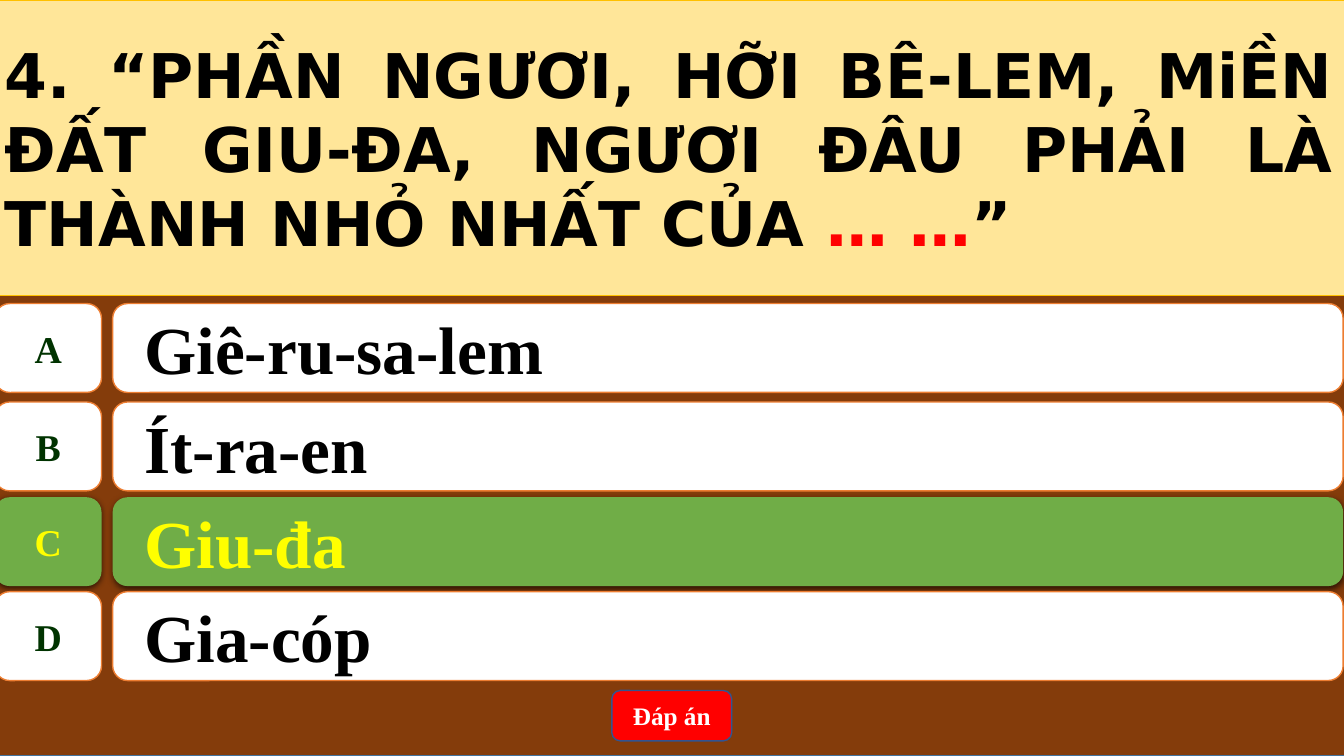
from lxml import etree
from pptx import Presentation
from pptx.dml.color import RGBColor
from pptx.enum.shapes import MSO_SHAPE
from pptx.enum.text import MSO_ANCHOR, MSO_AUTO_SIZE, PP_ALIGN
from pptx.oxml import parse_xml
from pptx.util import Cm, Pt

RECT, ROUNDED = MSO_SHAPE.RECTANGLE, MSO_SHAPE.ROUNDED_RECTANGLE
LETTER_BOX = MSO_SHAPE.FLOWCHART_ALTERNATE_PROCESS
MIDDLE, NO_FIT = MSO_ANCHOR.MIDDLE, MSO_AUTO_SIZE.NONE
LEFT, CENTER, JUSTIFY = PP_ALIGN.LEFT, PP_ALIGN.CENTER, PP_ALIGN.JUSTIFY
TITLE_ONLY = 5

COLORS = {
    "brown": "843C0B", "blue": "43739E", "cream": "FFE699", "gold": "FFC000",
    "white": "FFFFFF", "orange": "ED7D31", "green": "70AD47", "yellow": "FFFF00",
    "dark green": "003300", "black": "000000", "red": "FF0000", "navy": "325491",
}
SHADOW = (
    '<a:effectLst xmlns:a="http://schemas.openxmlformats.org/drawingml/2006/main">'
    '<a:outerShdw blurRad="57150" dist="19050" dir="5400000" algn="ctr" rotWithShape="0">'
    '<a:srgbClr val="000000"><a:alpha val="63000"/></a:srgbClr>'
    '</a:outerShdw></a:effectLst>'
)


class QuizSlide:
    FONT = "Times New Roman"
    QUESTION_FONT = "DejaVu Sans"
    EDGE, WIDTH = -0.13, 34.01
    LETTER_WIDTH, ANSWER_LEFT, ANSWER_WIDTH = 2.69, 2.84, 31.01
    ROW_HEIGHT = 2.24

    def __init__(self, presentation):
        self.slide = presentation.slides.add_slide(presentation.slide_layouts[TITLE_ONLY])

    def color(self, name):
        return RGBColor.from_string(COLORS[name])

    def paint(self, shape, fill, line=None, line_width=1):
        shape.fill.solid()
        shape.fill.fore_color.rgb = self.color(fill)
        if line:
            shape.line.color.rgb = self.color(line)
            shape.line.width = Pt(line_width)
        else:
            shape.line.fill.background()

    def box(self, kind, left, top, width, height, fill, line=None):
        shape = self.slide.shapes.add_shape(kind, Cm(left), Cm(top), Cm(width), Cm(height))
        shape.shadow.inherit = False
        self.paint(shape, fill, line)
        return shape

    def label(self, shape, text, size, color, align=CENTER, wrap=True):
        frame = shape.text_frame
        frame.word_wrap = wrap
        frame.vertical_anchor = MIDDLE
        paragraph = frame.paragraphs[0]
        paragraph.text = text
        paragraph.alignment = align
        font = paragraph.font
        font.name, font.size, font.bold = self.FONT, Pt(size), True
        font.color.rgb = self.color(color)

    def cast_shadow(self, shape):
        properties = shape.element.spPr
        for effects in properties.findall("{*}effectLst"):
            properties.replace(effects, parse_xml(etree.tostring(etree.fromstring(SHADOW))))

    def question(self, parts):
        title = self.slide.shapes.title
        title.left, title.top = Cm(self.EDGE), Cm(0)
        title.width, title.height = Cm(self.WIDTH), Cm(7.44)
        self.paint(title, "cream", "gold", 0.5)
        frame = title.text_frame
        frame.word_wrap, frame.auto_size = True, NO_FIT
        frame.vertical_anchor = MIDDLE
        paragraph = frame.paragraphs[0]
        paragraph.alignment = JUSTIFY
        font = paragraph.font
        font.name, font.size, font.bold = self.QUESTION_FONT, Pt(44), True
        for text, color in parts:
            run = paragraph.add_run()
            run.text = text
            run.font.color.rgb = self.color(color)
        # Bring the question in front of the backdrop
        self.slide.shapes.element.append(title.element)

    def answer(self, letter, text, top, correct=False):
        fill, line = ("green", None) if correct else ("white", "orange")
        answer_box = self.box(ROUNDED, self.ANSWER_LEFT, top, self.ANSWER_WIDTH,
                              self.ROW_HEIGHT, fill, line)
        self.label(answer_box, text, 48, "yellow" if correct else "black", LEFT)
        answer_box.text_frame.margin_left = Cm(0.69)
        letter_box = self.box(LETTER_BOX, self.EDGE, top, self.LETTER_WIDTH,
                              self.ROW_HEIGHT, fill, line)
        self.label(letter_box, letter, 27, "yellow" if correct else "dark green", wrap=False)
        if correct:
            self.cast_shadow(answer_box)
            self.cast_shadow(letter_box)


def main():
    presentation = Presentation()
    presentation.slide_width, presentation.slide_height = Cm(33.87), Cm(19.05)
    quiz = QuizSlide(presentation)

    # Backdrop and question
    quiz.box(RECT, quiz.EDGE, 0, quiz.WIDTH, 19.05, "brown", "blue")
    quiz.question([
        ("4. “PHẦN NGƯƠI, HỠI BÊ-LEM, MiỀN ĐẤT GIU-ĐA, NGƯƠI ĐÂU PHẢI LÀ "
         "THÀNH NHỎ NHẤT CỦA ", "black"),
        ("… …", "red"),
        ("”", "black"),
    ])

    # Answers, with the correct one highlighted
    answers = [("A", "Giê-ru-sa-lem", 7.65), ("B", "Ít-ra-en", 10.13),
               ("C", "Giu-đa", 12.53), ("D", "Gia-cóp", 14.91)]
    for letter, text, top in answers:
        quiz.answer(letter, text, top, correct=letter == "C")

    # Answer button
    button = quiz.box(ROUNDED, 15.42, 17.4, 3.02, 1.27, "red", "navy")
    quiz.label(button, "Đáp án", 18, "white")

    presentation.save("out.pptx")


if __name__ == "__main__":
    main()
